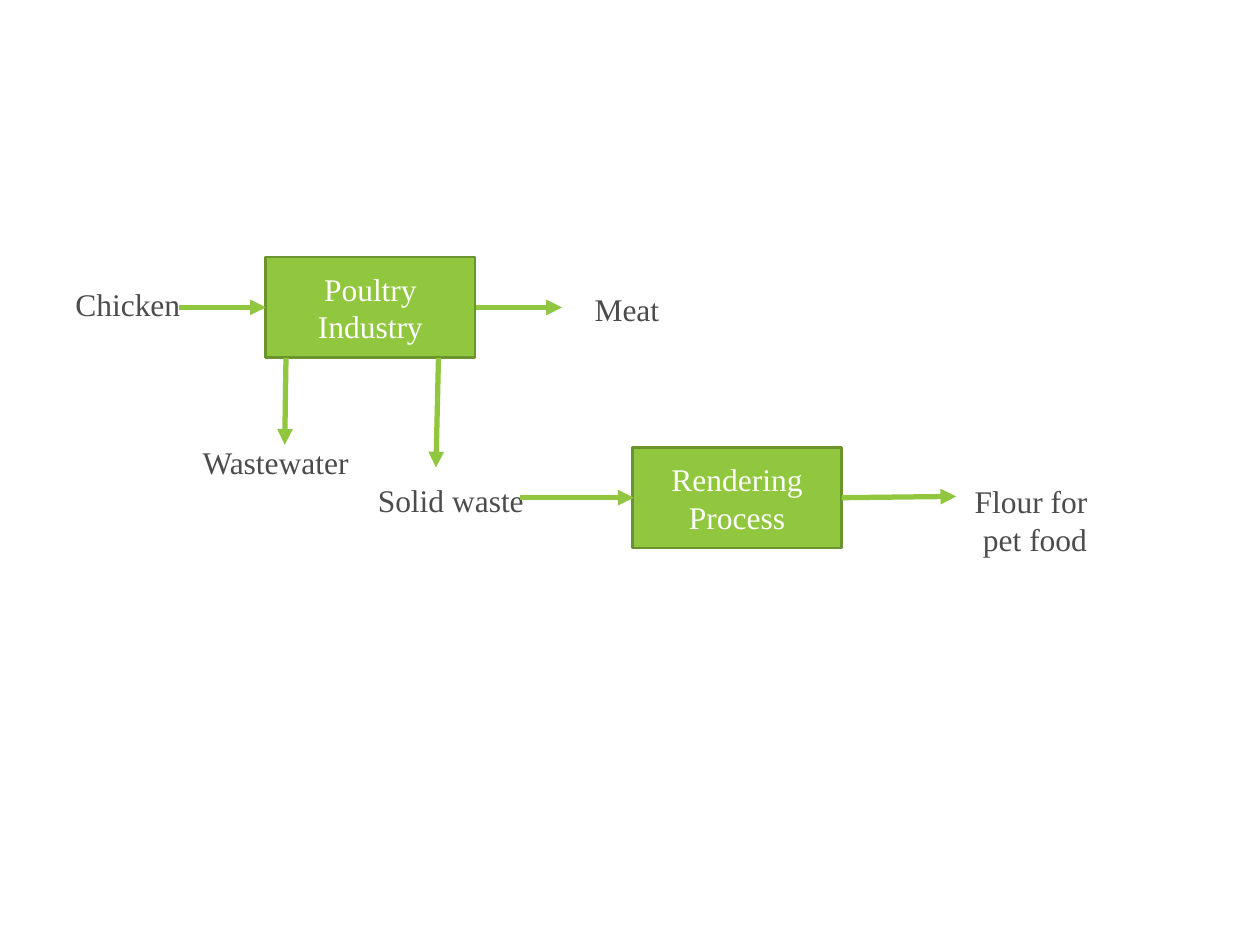
from dataclasses import dataclass

from lxml import etree
from pptx import Presentation
from pptx.dml.color import RGBColor
from pptx.enum.shapes import MSO_CONNECTOR, MSO_SHAPE
from pptx.enum.text import MSO_ANCHOR, MSO_AUTO_SIZE, PP_ALIGN
from pptx.oxml.ns import qn
from pptx.util import Inches, Pt

RECTANGLE = MSO_SHAPE.RECTANGLE
STRAIGHT = MSO_CONNECTOR.STRAIGHT
MIDDLE = MSO_ANCHOR.MIDDLE
FIT_SHAPE = MSO_AUTO_SIZE.SHAPE_TO_FIT_TEXT
LEFT, CENTER = PP_ALIGN.LEFT, PP_ALIGN.CENTER

COLORS = {"green": "90C73E", "border": "6B932E", "label": "4C4C4C", "white": "FFFFFF"}
FONT = "Times New Roman"
FONT_SIZE = 18
PROCESS_WIDTH, PROCESS_HEIGHT = 1.66, 0.8


@dataclass
class Process:
    text: str
    left: float
    top: float


@dataclass
class Label:
    lines: tuple[str, ...]
    left: float
    top: float
    width: float
    height: float = 0.4
    align: PP_ALIGN = LEFT


@dataclass
class Flow:
    start: tuple[float, float]
    end: tuple[float, float]


PROCESSES = [
    Process("Poultry Industry", 2.11, 2.04),
    Process("Rendering Process", 5.02, 3.55),
]
LABELS = [
    Label(("Chicken",), 0.5, 2.21, 1.04),
    Label(("Meat",), 4.62, 2.25, 0.72),
    Label(("Wastewater",), 1.51, 3.47, 1.37),
    Label(("Solid waste",), 2.9, 3.77, 1.37),
    Label(("Flour for ", "pet food"), 7.63, 3.78, 1.17, 0.71, CENTER),
]
FLOWS = [
    Flow((1.42, 2.44), (2.11, 2.44)),  # chicken in
    Flow((3.78, 2.44), (4.46, 2.44)),  # meat out
    Flow((2.27, 2.84), (2.26, 3.53)),  # wastewater out
    Flow((3.48, 2.84), (3.46, 3.71)),  # solid waste out
    Flow((4.13, 3.95), (5.03, 3.95)),  # solid waste to rendering
    Flow((6.68, 3.95), (7.59, 3.94)),  # flour out
]


def rgb(name: str) -> RGBColor:
    return RGBColor.from_string(COLORS[name])


def write_line(paragraph, text: str, color: str, align: PP_ALIGN) -> None:
    paragraph.alignment = align
    run = paragraph.add_run()
    run.text = text
    run.font.name = FONT
    run.font.size = Pt(FONT_SIZE)
    run.font.color.rgb = rgb(color)


def draw_process(slide, process: Process) -> None:
    box = slide.shapes.add_shape(
        RECTANGLE, Inches(process.left), Inches(process.top),
        Inches(PROCESS_WIDTH), Inches(PROCESS_HEIGHT))
    box.shadow.inherit = False
    box.fill.solid()
    box.fill.fore_color.rgb = rgb("green")
    box.line.color.rgb = rgb("border")
    box.line.width = Pt(1.5)
    box.text_frame.word_wrap = True
    box.text_frame.vertical_anchor = MIDDLE
    write_line(box.text_frame.paragraphs[0], process.text, "white", CENTER)


def draw_label(slide, label: Label) -> None:
    frame = slide.shapes.add_textbox(
        Inches(label.left), Inches(label.top),
        Inches(label.width), Inches(label.height)).text_frame
    frame.word_wrap = False
    frame.auto_size = FIT_SHAPE
    for index, line in enumerate(label.lines):
        paragraph = frame.add_paragraph() if index else frame.paragraphs[0]
        write_line(paragraph, line, "label", label.align)


def draw_flow(slide, flow: Flow) -> None:
    arrow = slide.shapes.add_connector(
        STRAIGHT, *(Inches(value) for value in flow.start + flow.end))
    arrow.line.color.rgb = rgb("green")
    arrow.line.width = Pt(3)
    properties = arrow._element.spPr
    etree.SubElement(properties.find(qn("a:ln")), qn("a:tailEnd"), type="triangle")
    etree.SubElement(properties, qn("a:effectLst"))


def main() -> None:
    presentation = Presentation()
    presentation.slide_width = Inches(10)
    presentation.slide_height = Inches(7.5)
    slide = presentation.slides.add_slide(presentation.slide_layouts[6])

    # Process boxes
    for process in PROCESSES:
        draw_process(slide, process)
    # Inputs and outputs
    for label in LABELS:
        draw_label(slide, label)
    # Arrows between them
    for flow in FLOWS:
        draw_flow(slide, flow)

    presentation.save("out.pptx")


if __name__ == "__main__":
    main()
